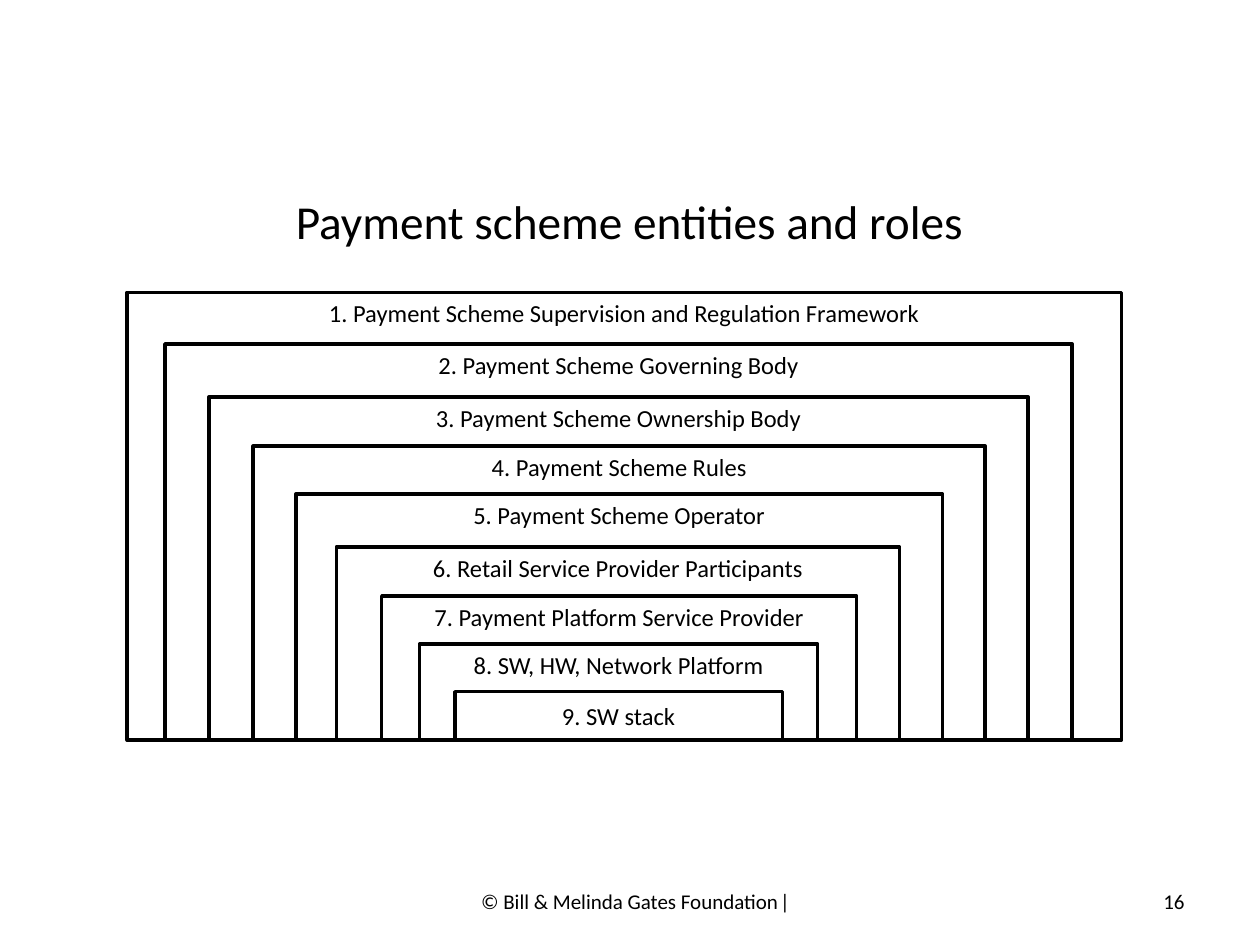
from lxml import etree
from pptx import Presentation
from pptx.dml.color import RGBColor
from pptx.enum.shapes import MSO_SHAPE
from pptx.enum.text import MSO_ANCHOR, PP_ALIGN
from pptx.oxml.ns import qn
from pptx.util import Inches, Pt

BLACK = RGBColor(0, 0, 0)
RECT = MSO_SHAPE.RECTANGLE
TOP, MID = MSO_ANCHOR.TOP, MSO_ANCHOR.MIDDLE
LEFT, CENTER, RIGHT = PP_ALIGN.LEFT, PP_ALIGN.CENTER, PP_ALIGN.RIGHT
UNIT = Inches(0.01)  # grid of 1000 columns by 750 rows

# Label, then left, right and top inset within the nest, in grid units
LAYERS = [
    ("1. Payment Scheme Supervision and Regulation Framework", 0, 0, 0),
    ("2. Payment Scheme Governing Body", 30, 39, 41),
    ("3. Payment Scheme Ownership Body", 65, 74, 83),
    ("4. Payment Scheme Rules", 100, 108, 122),
    ("5. Payment Scheme Operator", 134, 142, 160),
    ("6. Retail Service Provider Participants", 166, 176, 202),
    ("7. Payment Platform Service Provider", 202, 210, 241),
    ("8. SW, HW, Network Platform", 232, 241, 279),
    ("9. SW stack", 260, 269, 317),
]


def grid(*box):
    return [int(n * UNIT) for n in box]


def write(shape, text, size, align, anchor):
    frame = shape.text_frame
    frame.word_wrap = True
    frame.vertical_anchor = anchor
    para = frame.paragraphs[0]
    para.text = text
    para.alignment = align
    para.font.size = Pt(size)
    para.font.name = "Calibri"
    para.font.color.rgb = BLACK
    return frame


def label(slide, box, text, size, align):
    shape = slide.shapes.add_textbox(*grid(*box))
    return write(shape, text, size, align, MID)


def nest(slide, box):
    """Nested layers on one base line, innermost at the back."""
    left, top, width, height = box
    group = slide.shapes.add_group_shape()
    for text, west, east, north in reversed(LAYERS):
        shape = group.shapes.add_shape(RECT, *grid(
            left + west, top + north, width - west - east, height - north))
        shape.shadow.inherit = False
        shape.fill.background()
        shape.line.color.rgb = BLACK
        shape.line.width = Pt(2)
        inner = text == LAYERS[-1][0]
        frame = write(shape, text, 14, CENTER, MID if inner else TOP)
        if text.startswith("6."):
            frame.margin_left = frame.margin_right = 0


def footer(slide, box):
    left, top, width, height = box
    # Copyright line, with a tab stop for the divider
    shape = slide.shapes.add_textbox(*grid(left, top, 317, height))
    props = shape.text_frame.paragraphs[0]._p.get_or_add_pPr()
    props.set("marL", str(30 * UNIT))
    props.set("indent", "0")
    tabs = etree.SubElement(props, qn("a:tabLst"))
    etree.SubElement(tabs, qn("a:tab"), pos=str(288 * UNIT), algn="l")
    write(shape, "© Bill & Melinda Gates Foundation\t|", 12, LEFT, MID)
    # Page number
    label(slide, (left + width - 233, top, 233, height), "16", 12, RIGHT)


def main():
    deck = Presentation()
    deck.slide_width, deck.slide_height = grid(1000, 750)
    slide = deck.slides.add_slide(deck.slide_layouts[6])
    footer(slide, (342, 695, 608, 40))
    label(slide, (44, 147, 911, 57),
          "Payment scheme entities and roles", 27, CENTER)
    nest(slide, (101, 232, 789, 355.5))
    deck.save("out.pptx")


if __name__ == "__main__":
    main()
